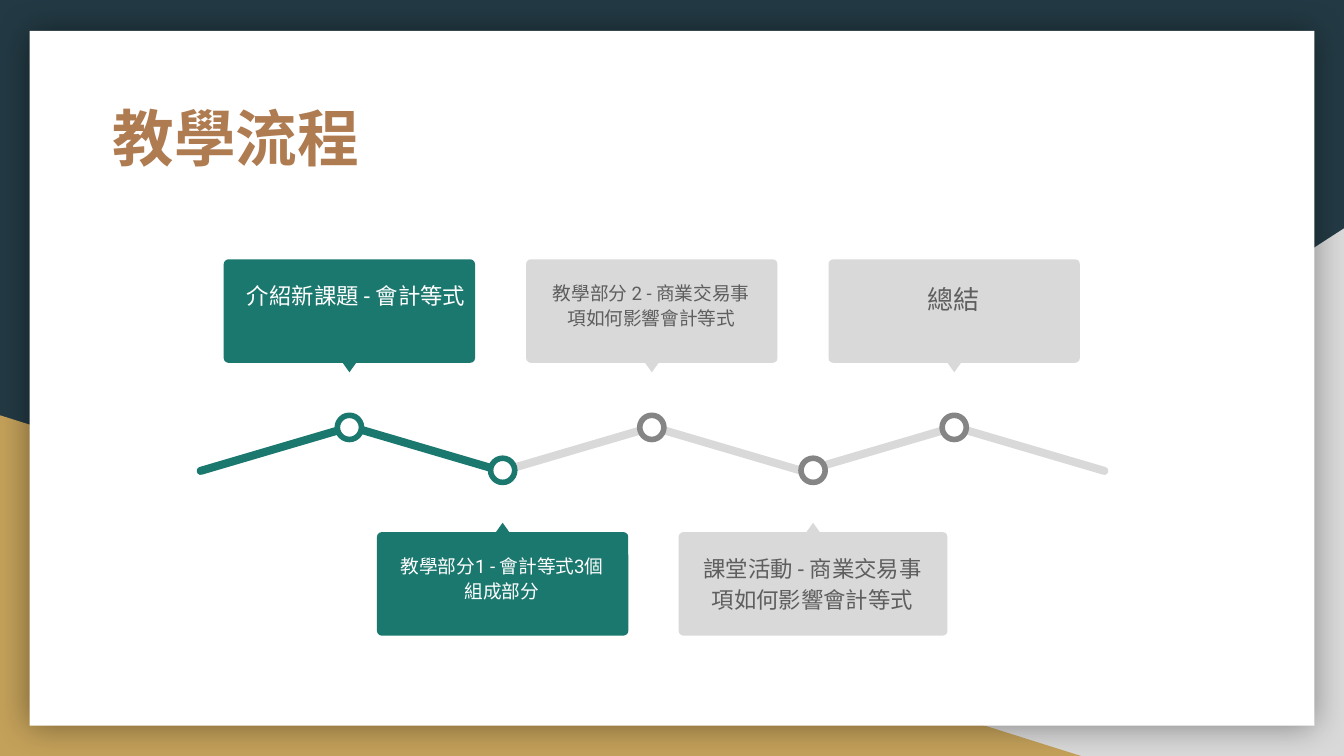
"""Build a lesson-flow slide: a zigzag timeline with five labelled milestones."""
from dataclasses import dataclass

from lxml.etree import SubElement
from pptx import Presentation
from pptx.dml.color import RGBColor
from pptx.enum.shapes import MSO_SHAPE
from pptx.enum.text import MSO_ANCHOR, PP_ALIGN
from pptx.oxml.ns import qn
from pptx.shapes.autoshape import Shape
from pptx.slide import Slide
from pptx.util import Inches, Pt

NAVY = RGBColor(0x23, 0x3A, 0x44)
GOLD = RGBColor(0xC4, 0xA1, 0x5A)
BROWN = RGBColor(0xAF, 0x7B, 0x51)
GREEN = RGBColor(0x1B, 0x78, 0x6E)
LIGHT_GREY = RGBColor(0xD9, 0xD9, 0xD9)
MID_GREY = RGBColor(0x85, 0x85, 0x85)
DARK_GREY = RGBColor(0x5E, 0x5E, 0x5E)
WHITE = RGBColor(0xFF, 0xFF, 0xFF)

SLIDE_WIDTH = Inches(10)
SLIDE_HEIGHT = SLIDE_WIDTH * 9 // 16
CARD_HEIGHT = 0.77
NODE_SIZE = 0.18
POINTER_WIDTH, POINTER_HEIGHT = 0.1, 0.07
BAR_WIDTH, BAR_HEIGHT, BAR_TILT = 1.22, 0.06, 16.4


@dataclass(frozen=True)
class Theme:
    card: RGBColor
    ring: RGBColor
    label: RGBColor


@dataclass(frozen=True)
class Milestone:
    label: str
    center: float
    size: int
    theme: Theme
    above: bool
    width: float = 1.87
    extra_label_width: float = 0


DONE = Theme(GREEN, GREEN, WHITE)
AHEAD = Theme(LIGHT_GREY, MID_GREY, DARK_GREY)

MILESTONES = [
    Milestone("介紹新課題 - 會計等式", 2.6, 12, DONE, True, extra_label_width=0.11),
    Milestone("教學部分1 - 會計等式3個組成部分", 3.74, 10, DONE, False),
    Milestone("教學部分 2 - 商業交易事項如何影響會計等式", 4.85, 10, AHEAD, True),
    Milestone("課堂活動 - 商業交易事項如何影響會計等式", 6.05, 12, AHEAD, False, width=2),
    Milestone("總結", 7.1, 14, AHEAD, True),
]
BAR_LEFTS = [1.44, 2.56, 3.69, 4.8, 5.94, 7.05]


def add_block(slide: Slide, kind: MSO_SHAPE, left: float, top: float, width: float,
              height: float, fill: RGBColor, rotation: float = 0) -> Shape:
    """Add a flat filled shape without outline."""
    block = slide.shapes.add_shape(kind, Inches(left), Inches(top), Inches(width), Inches(height))
    block.shadow.inherit = False
    block.fill.solid()
    block.fill.fore_color.rgb = fill
    block.line.fill.background()
    block.rotation = rotation
    return block


def add_label(slide: Slide, text: str, left: float, top: float, width: float, height: float,
              font_name: str, size: int, color: RGBColor, bold: bool = False,
              align: PP_ALIGN = PP_ALIGN.CENTER, spacing: float = 1.15) -> None:
    """Add a wrapped, top-anchored text box with one paragraph."""
    box = slide.shapes.add_textbox(Inches(left), Inches(top), Inches(width), Inches(height))
    frame = box.text_frame
    frame.word_wrap = True
    frame.vertical_anchor = MSO_ANCHOR.TOP
    frame.margin_left = frame.margin_right = frame.margin_top = frame.margin_bottom = Inches(0.1)
    paragraph = frame.paragraphs[0]
    paragraph.text = text
    paragraph.alignment = align
    paragraph.line_spacing = spacing
    paragraph.font.name = font_name
    paragraph.font.size = Pt(size)
    paragraph.font.bold = bold
    paragraph.font.color.rgb = color


def add_glow_shadow(panel: Shape) -> None:
    """Give the panel a soft black shadow on all sides."""
    effects = panel._element.spPr.find(qn("a:effectLst"))
    shadow = SubElement(effects, qn("a:outerShdw"), blurRad=str(Pt(18)), dist="0", dir="0",
                        algn="ctr", rotWithShape="0")
    black = SubElement(shadow, qn("a:srgbClr"), val="000000")
    SubElement(black, qn("a:alpha"), val="40000")


def add_backdrop(slide: Slide) -> None:
    """Paint the navy background, the two corner wedges and the white panel."""
    slide.background.fill.solid()
    slide.background.fill.fore_color.rgb = NAVY
    right_wedge = add_block(slide, MSO_SHAPE.RIGHT_TRIANGLE, 3.92, 1.7, 6.08, 3.93, LIGHT_GREY)
    right_wedge._element.spPr.find(qn("a:xfrm")).set("flipH", "1")
    add_block(slide, MSO_SHAPE.RIGHT_TRIANGLE, 0, 3.09, 8.06, 2.54, GOLD)
    panel = add_block(slide, MSO_SHAPE.RECTANGLE, 0.22, 0.23, 9.56, 5.17, WHITE)
    add_glow_shadow(panel)


def add_zigzag(slide: Slide) -> None:
    """Draw the tilted bars, later ones first so that green lies on top."""
    for index, left in reversed(list(enumerate(BAR_LEFTS))):
        tilt = BAR_TILT if index % 2 else 360 - BAR_TILT
        color = GREEN if index < 2 else LIGHT_GREY
        bar = add_block(slide, MSO_SHAPE.ROUNDED_RECTANGLE, left, 3.31, BAR_WIDTH, BAR_HEIGHT,
                        color, tilt)
        bar.adjustments[0] = 0.5


def add_milestone(slide: Slide, milestone: Milestone) -> None:
    """Draw a ring on the zigzag with its card, pointer and label."""
    theme, center = milestone.theme, milestone.center
    card_top, pointer_top, node_top = (1.93, 2.7, 3.09) if milestone.above else (3.96, 3.89, 3.41)
    card_left = center - milestone.width / 2
    card = add_block(slide, MSO_SHAPE.ROUNDED_RECTANGLE, card_left, card_top,
                     milestone.width, CARD_HEIGHT, theme.card)
    card.adjustments[0] = 0.045
    add_block(slide, MSO_SHAPE.ISOSCELES_TRIANGLE, center - POINTER_WIDTH / 2, pointer_top,
              POINTER_WIDTH, POINTER_HEIGHT, theme.card, 180 if milestone.above else 0)
    label_width = milestone.width - 0.11 + milestone.extra_label_width
    add_label(slide, milestone.label, card_left + 0.05, card_top + 0.04,
              label_width, 0.68, "Roboto", milestone.size, theme.label)
    node = add_block(slide, MSO_SHAPE.OVAL, center - NODE_SIZE / 2, node_top,
                     NODE_SIZE, NODE_SIZE, WHITE)
    node.line.color.rgb = theme.ring
    node.line.width = Pt(3)


def main() -> None:
    """Assemble and save the slide."""
    deck = Presentation()
    deck.slide_width, deck.slide_height = SLIDE_WIDTH, SLIDE_HEIGHT
    slide = deck.slides.add_slide(deck.slide_layouts[6])
    add_backdrop(slide)
    add_label(slide, "教學流程", 0.74, 0.64, 8.21, 1.04, "Manrope", 33, BROWN,
              bold=True, align=PP_ALIGN.LEFT, spacing=1.0)
    add_zigzag(slide)
    for milestone in MILESTONES:
        add_milestone(slide, milestone)
    deck.save("out.pptx")


if __name__ == "__main__":
    main()
